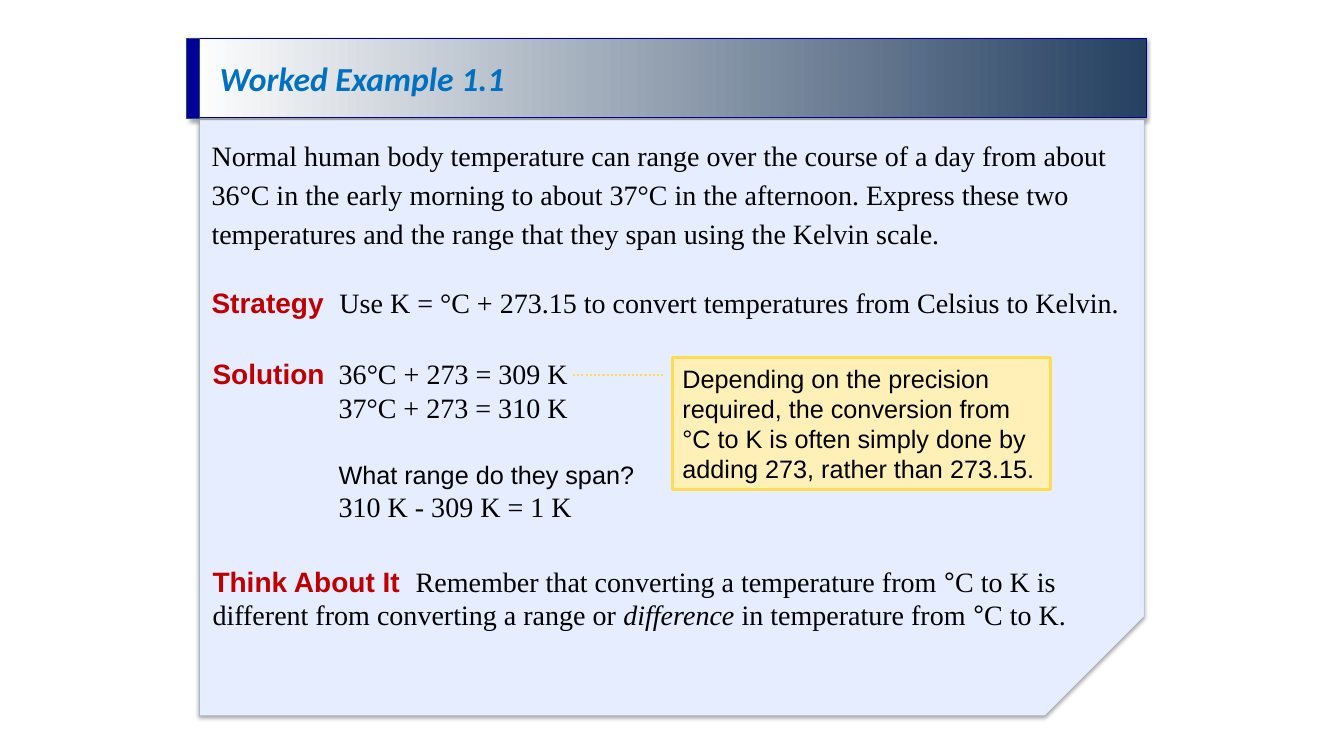
import pptx
import pptx.util
import pptx.dml.color
import pptx.enum.dml
import pptx.enum.shapes
import pptx.enum.text
import lxml.etree
from pptx.util import Inches, Pt

COLORS = {"ink": "000000", "red": "C00000", "title": "0070C0", "navy": "000099",
          "slate": "254061", "edge": "1F4E79", "panel": "E5EDFF",
          "note": "FFF0B7", "gold": "FFDA53", "white": "FFFFFF"}

STYLES = {
    "title": ("Calibri", 24, "title", True, True),
    "label": ("Arial", 20, "red", True, False),
    "body": ("Times New Roman", 20, "ink", False, False),
    "stress": ("Times New Roman", 20, "ink", False, True),
    "degree": ("Arial", 20, "ink", False, False),
    "note": ("Arial", 18, "ink", False, False),
}

TITLE = [[("Worked Example 1.1", "title")]]
PROBLEM = [[("Normal human body temperature can range over the course of a day from about "
             "36°C in the early morning to about 37°C in the afternoon. Express these two "
             "temperatures and the range that they span using the Kelvin scale.", "body")]]
STRATEGY = [[("Strategy  ", "label"),
             ("Use K = °C + 273.15 to convert temperatures from Celsius to Kelvin.", "body")]]
SOLUTION = [
    [("Solution", "label"), ("  36°C + 273 = 309 K", "body")],
    [("37°C + 273 = 310 K", "body")],
    [("What range do they span?", "note")],
    [("310 K - 309 K = 1 K", "body")],
]
THINK = [[("Think About It  ", "label"),
          ("Remember that converting a temperature from ", "body"), ("°", "degree"),
          ("C to K is different from converting a range or ", "body"),
          ("difference", "stress"), (" in temperature from ", "body"),
          ("°", "degree"), ("C to K.", "body")]]
NOTE = [[("Depending on the precision required, the conversion from °C to K is often "
          "simply done by adding 273, rather than 273.15.", "note")]]

BANNER = (1.88, 0.38, 9.49, 0.79)
PANEL = (1.98, 1.19, 9.37, 5.91)
TAB = (1.85, 0.38, 0.13, 0.79)
NOTE_BOX = (6.67, 3.55, 3.75, 1.31)
SOLUTION_INDENT = 1.25
DRAWING_NS = "http://schemas.openxmlformats.org/drawingml/2006/main"


def rgb(name):
    return pptx.dml.color.RGBColor.from_string(COLORS[name])


def add_element(parent, tag, **attributes):
    return lxml.etree.SubElement(parent, f"{{{DRAWING_NS}}}{tag}", attributes)


def set_line(item, color, width):
    item.line.color.rgb = rgb(color)
    item.line.width = Pt(width)


def add_panel(page, kind, place, fill, line, width):
    box = page.shapes.add_shape(kind, *map(Inches, place))
    box.shadow.inherit = False
    if fill:
        box.fill.solid()
        box.fill.fore_color.rgb = rgb(fill)
    set_line(box, line, width)
    return box


def add_shadow(box):
    effects = box._element.spPr.find(f"{{{DRAWING_NS}}}effectLst")
    shadow = add_element(effects, "outerShdw", blurRad=str(Pt(3.1)), dist=str(Pt(1.8)),
                         dir="5400000", algn="t", rotWithShape="0")
    color = add_element(shadow, "srgbClr", val=COLORS["ink"])
    add_element(color, "alpha", val="35000")


def style_font(font, style):
    font.name, size, color, font.bold, font.italic = STYLES[style]
    font.size = Pt(size)
    font.color.rgb = rgb(color)


def write(box, paragraphs, anchor=pptx.enum.text.MSO_ANCHOR.TOP):
    frame = box.text_frame
    frame.word_wrap = True
    frame.vertical_anchor = anchor
    for index, spans in enumerate(paragraphs):
        para = frame.add_paragraph() if index else frame.paragraphs[0]
        para.alignment = pptx.enum.text.PP_ALIGN.LEFT
        if len(spans) == 1:
            style_font(para.font, spans[0][1])
        for text, style in spans:
            span = para.add_run()
            span.text = text
            if len(spans) > 1:
                style_font(span.font, style)
    return frame.paragraphs


def add_text(page, place, paragraphs, **options):
    return write(page.shapes.add_textbox(*map(Inches, place)), paragraphs, **options)


def main():
    deck = pptx.Presentation()
    deck.slide_width, deck.slide_height = Inches(13.33), Inches(7.5)
    page = deck.slides.add_slide(deck.slide_layouts[6])
    shapes = pptx.enum.shapes.MSO_SHAPE
    middle = pptx.enum.text.MSO_ANCHOR.MIDDLE

    banner = add_panel(page, shapes.RECTANGLE, BANNER, None, "navy", 0.75)
    banner.fill.gradient()
    banner.fill.gradient_angle = 0
    for stop, color, position in zip(banner.fill.gradient_stops, ("white", "slate"), (0, 1)):
        stop.color.rgb = rgb(color)
        stop.position = position
    add_shadow(banner)

    panel = add_panel(page, shapes.SNIP_1_RECTANGLE, PANEL, "panel", "edge", 0.5)
    panel._element.spPr.xfrm.set("flipV", "1")
    line_color = panel._element.spPr.find(f".//{{{DRAWING_NS}}}ln//{{{DRAWING_NS}}}srgbClr")
    add_element(line_color, "alpha", val="18000")
    add_shadow(panel)

    problem = add_text(page, (2, 1.28, 9.33, 1.26), PROBLEM)[0]
    problem.line_spacing = 1.15
    problem.space_after = Pt(10)
    title = add_text(page, (2.08, 0.02, 8.41, 1.56), TITLE, anchor=middle)[0]
    title.line_spacing = 0.9
    add_text(page, (2, 2.78, 9.33, 0.77), STRATEGY)

    solution = add_text(page, (2.01, 3.49, 9.33, 1.78), SOLUTION)
    for para in solution[1:]:
        para._p.get_or_add_pPr().set("marL", str(Inches(SOLUTION_INDENT)))
    solution[2].space_before = Pt(25)

    add_panel(page, shapes.RECTANGLE, TAB, "navy", "edge", 0.5)
    note = add_panel(page, shapes.RECTANGLE, NOTE_BOX, "note", "gold", 2.25)
    write(note, NOTE, anchor=pptx.enum.text.MSO_ANCHOR.TOP)

    leader = page.shapes.add_connector(pptx.enum.shapes.MSO_CONNECTOR.STRAIGHT,
                                       *map(Inches, (6.58, 3.72, 5.67, 3.72)))
    set_line(leader, "gold", 1.5)
    leader.line.dash_style = pptx.enum.dml.MSO_LINE.ROUND_DOT
    add_element(leader._element.spPr, "effectLst")

    add_text(page, (2.01, 5.55, 8.74, 0.77), THINK)
    deck.save("out.pptx")


if __name__ == "__main__":
    main()
